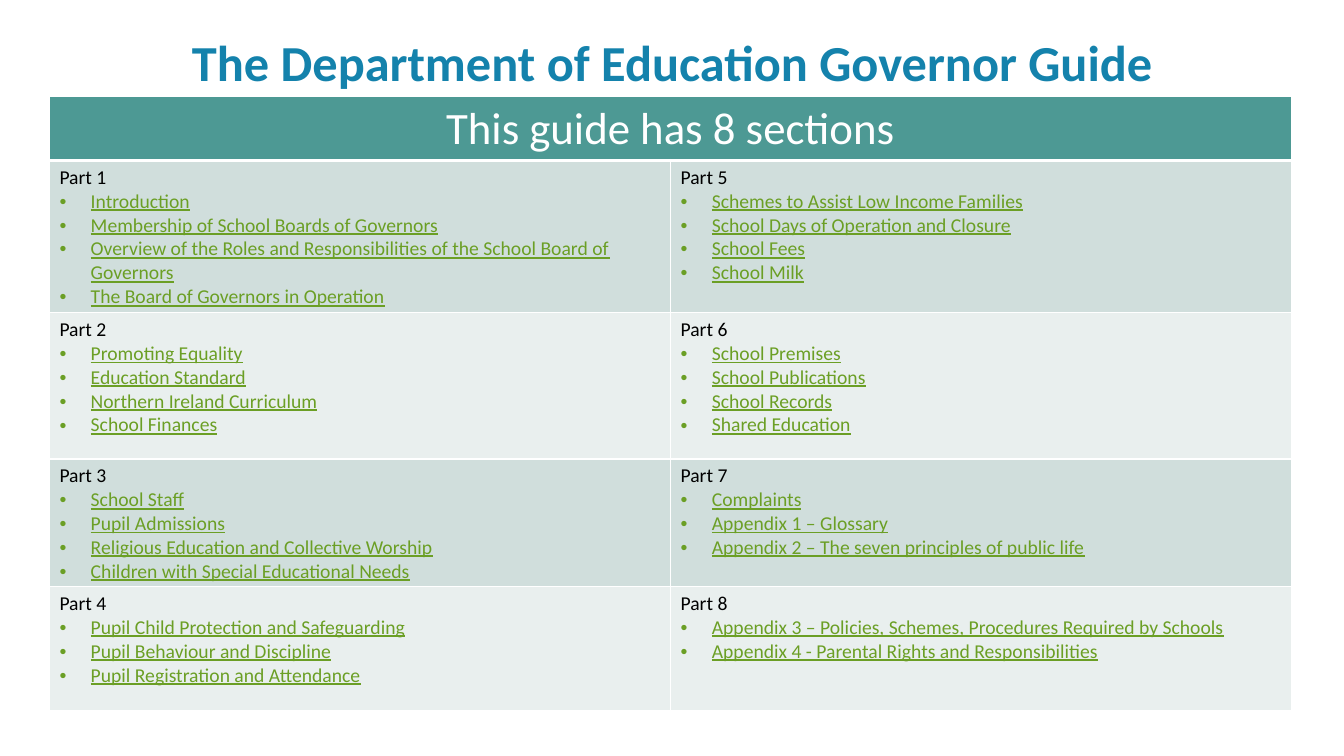
from lxml.etree import SubElement
from pptx import Presentation
from pptx.dml.color import RGBColor
from pptx.enum.text import MSO_ANCHOR, MSO_AUTO_SIZE, PP_ALIGN
from pptx.oxml import parse_xml
from pptx.oxml.ns import nsdecls, qn
from pptx.util import Inches, Pt

# Content: each row pairs a left part with a right part
TITLE = "The Department of Education Governor Guide"
HEADING = "This guide has 8 sections"
PART_ROWS = [
    (("Part 1", ["Introduction",
                 "Membership of School Boards of Governors",
                 "Overview of the Roles and Responsibilities of the School Board of Governors",
                 "The Board of Governors in Operation"]),
     ("Part 5", ["Schemes to Assist Low Income Families",
                 "School Days of Operation and Closure",
                 "School Fees",
                 "School Milk"])),
    (("Part 2", ["Promoting Equality",
                 "Education Standard",
                 "Northern Ireland Curriculum",
                 "School Finances"]),
     ("Part 6", ["School Premises",
                 "School Publications",
                 "School Records",
                 "Shared Education"])),
    (("Part 3", ["School Staff",
                 "Pupil Admissions",
                 "Religious Education and Collective Worship",
                 "Children with Special Educational Needs"]),
     ("Part 7", ["Complaints",
                 "Appendix 1 – Glossary",
                 "Appendix 2 – The seven principles of public life"])),
    (("Part 4", ["Pupil Child Protection and Safeguarding",
                 "Pupil Behaviour and Discipline",
                 "Pupil Registration and Attendance"]),
     ("Part 8", ["Appendix 3 – Policies, Schemes, Procedures Required by Schools",
                 "Appendix 4 - Parental Rights and Responsibilities"])),
]

# Style
FONT = "Calibri"
BLUE = RGBColor(0x14, 0x82, 0xAC)
TEAL = RGBColor(0x4D, 0x99, 0x94)
GREEN = RGBColor(0x6B, 0x9F, 0x25)
WHITE = RGBColor(0xFF, 0xFF, 0xFF)
BLACK = RGBColor(0, 0, 0)
BANDS = [RGBColor(0xD0, 0xDE, 0xDC), RGBColor(0xE9, 0xEF, 0xEE)]

# Layout
SLIDE_WIDTH, SLIDE_HEIGHT = Inches(13.33), Inches(7.5)
TITLE_AREA = [Inches(n) for n in (0.69, 0.26, 11.96, 0.71)]
TABLE_AREA = [Inches(n) for n in (0.49, 0.96, 12.32, 6.19)]
ROW_HEIGHTS = [0.61, 1.51, 1.45, 1.22, 1.23]
INDENT = Inches(0.31)


def add_span(para, text, size, color, bold=False, underline=False):
    span = para.add_run()
    span.text = text
    font = span.font
    font.name, font.size, font.bold, font.underline = FONT, Pt(size), bold, underline
    font.color.rgb = color


def add_bullet(para):
    props = para._p.get_or_add_pPr()
    props.set("marL", str(INDENT))
    props.set("indent", str(-INDENT))
    SubElement(props, qn("a:buFont"), typeface="Arial")
    SubElement(props, qn("a:buChar"), char="•")


def style_cell(cell, color, bottom=1):
    cell.fill.solid()
    cell.fill.fore_color.rgb = color
    sides = [("L", 1), ("R", 1), ("T", 1), ("B", bottom)]
    for place, (side, width) in enumerate(sides):
        border = parse_xml(
            f'<a:ln{side} {nsdecls("a")} w="{Pt(width)}"><a:solidFill>'
            f'<a:srgbClr val="{WHITE}"/></a:solidFill></a:ln{side}>')
        cell._tc.get_or_add_tcPr().insert(place, border)


deck = Presentation()
deck.slide_width, deck.slide_height = SLIDE_WIDTH, SLIDE_HEIGHT
page = deck.slides.add_slide(deck.slide_layouts[6])

# Title
box = page.shapes.add_textbox(*TITLE_AREA)
box.text_frame.word_wrap = True
box.text_frame.auto_size = MSO_AUTO_SIZE.SHAPE_TO_FIT_TEXT
para = box.text_frame.paragraphs[0]
para.alignment = PP_ALIGN.CENTER
add_span(para, TITLE, 36, BLUE, bold=True)

# Table grid; the frame keeps its full height after the rows are set
frame = page.shapes.add_table(len(ROW_HEIGHTS), 2, *TABLE_AREA)
table = frame.table
for row, height in zip(table.rows, ROW_HEIGHTS):
    row.height = Inches(height)
frame.height = TABLE_AREA[3]

# Heading row
heading = table.cell(0, 0)
heading.merge(table.cell(0, 1))
heading.vertical_anchor = MSO_ANCHOR.MIDDLE
for cell in table.rows[0].cells:
    style_cell(cell, TEAL, bottom=3)
para = heading.text_frame.paragraphs[0]
para.alignment = PP_ALIGN.CENTER
add_span(para, HEADING, 32, WHITE)

# Part cells
for row_number, parts in enumerate(PART_ROWS):
    for column, (part, topics) in enumerate(parts):
        cell = table.cell(row_number + 1, column)
        style_cell(cell, BANDS[row_number % 2])
        add_span(cell.text_frame.paragraphs[0], part, 14, BLACK)
        for topic in topics:
            para = cell.text_frame.add_paragraph()
            add_bullet(para)
            add_span(para, topic, 14, GREEN, underline=True)

deck.save("out.pptx")
